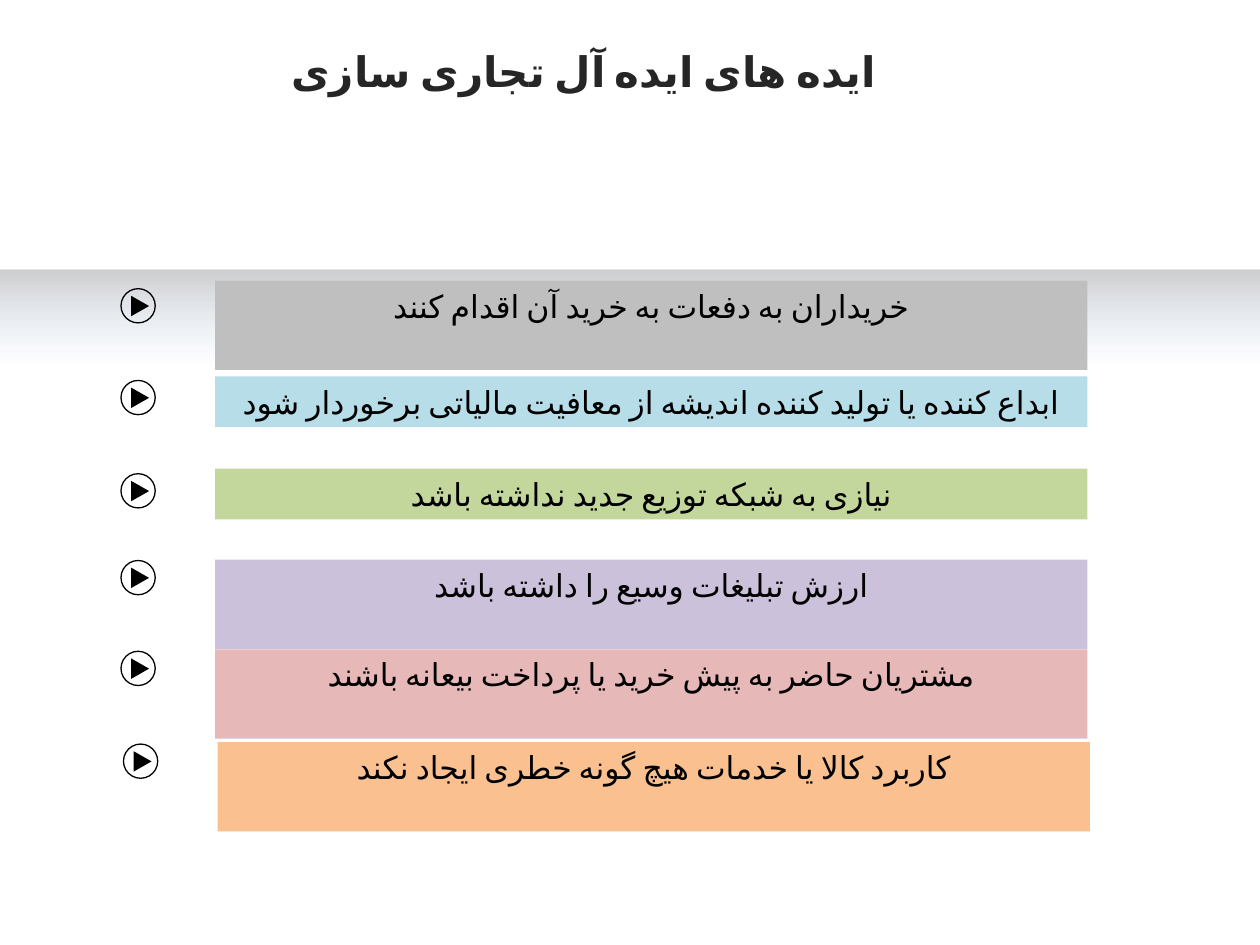
from dataclasses import dataclass

from lxml.etree import SubElement
from pptx import Presentation
from pptx.dml.color import RGBColor
from pptx.enum.shapes import MSO_SHAPE
from pptx.enum.text import MSO_ANCHOR, PP_ALIGN
from pptx.oxml.ns import qn
from pptx.shapes.autoshape import Shape
from pptx.slide import Slide
from pptx.util import Cm, Pt

FONT = "Calibri"
COLORS = {
    "title": "262626", "ink": "000000", "shade": "0D0D0D", "haze": "3F80CE",
    "grey": "BFBFBF", "blue": "B7DEE8", "green": "C3D69B",
    "purple": "CCC1DA", "red": "E6B9B8", "orange": "FAC090",
}
BAR_LEFT, BAR_WIDTH = 4.34, 17.58
SHORT, TALL = 1.02, 1.8
ICON_LEFT, ICON_SIZE = 2.44, 0.69
ARROW_WIDTH, ARROW_HEIGHT = 0.41, 0.36


@dataclass
class Idea:
    text: str
    color: str
    top: float
    height: float
    icon_top: float
    shift: float = 0


IDEAS = [
    Idea("خریداران به دفعات به خرید آن اقدام کنند", "grey", 5.66, TALL, 5.82),
    Idea("ابداع کننده یا تولید کننده اندیشه از معافیت مالیاتی برخوردار شود",
         "blue", 7.59, SHORT, 7.67),
    Idea("نیازی به شبکه توزیع جدید نداشته باشد", "green", 9.45, SHORT, 9.55),
    Idea("ارزش تبلیغات وسیع را داشته باشد", "purple", 11.28, TALL, 11.3),
    Idea("مشتریان حاضر به پیش خرید یا پرداخت بیعانه باشند",
         "red", 13.09, TALL, 13.13),
    Idea("کاربرد کالا یا خدمات هیچ گونه خطری ایجاد نکند",
         "orange", 14.96, TALL, 15, shift=0.05),
]


def rgb(name: str) -> RGBColor:
    return RGBColor.from_string(COLORS[name])


def fill_plain(shape: Shape, color: str) -> None:
    shape.shadow.inherit = False
    shape.fill.solid()
    shape.fill.fore_color.rgb = rgb(color)
    shape.line.fill.background()


def write_persian(shape: Shape, text: str, size: int, color: str,
                  bold: bool = False) -> None:
    """Write one centred right-to-left line at the top of the shape."""
    frame = shape.text_frame
    frame.word_wrap = True
    frame.vertical_anchor = MSO_ANCHOR.TOP
    paragraph = frame.paragraphs[0]
    paragraph.alignment = PP_ALIGN.CENTER
    paragraph._p.get_or_add_pPr().set("rtl", "1")
    run = paragraph.add_run()
    run.text = text
    run.font.name = FONT
    run.font.size = Pt(size)
    run.font.bold = bold
    run.font.color.rgb = rgb(color)
    properties = run._r.get_or_add_rPr()
    properties.set("lang", "fa-IR")
    SubElement(properties, qn("a:cs")).set("typeface", FONT)


def draw_title(slide: Slide) -> None:
    title = slide.shapes.add_textbox(Cm(2.18), Cm(0.79), Cm(19.18), Cm(1.3))
    write_persian(title, "ایده های ایده آل تجاری سازی", 24, "title", bold=True)


def draw_shadow_band(slide: Slide) -> None:
    """Draw the band that fades downwards from grey to nothing."""
    band = slide.shapes.add_shape(
        MSO_SHAPE.RECTANGLE, 0, Cm(5.43), Cm(25.4), Cm(3.35))
    band.shadow.inherit = False
    band.line.fill.background()
    band.fill.gradient()
    band.fill.gradient_angle = 270
    stops = zip(band.fill.gradient_stops,
                [("shade", 0, 20), ("haze", 0.57, 0)])
    for stop, (color, position, opacity) in stops:
        stop.position = position
        stop.color.rgb = rgb(color)
        color_element = stop._gs.find(qn("a:srgbClr"))
        SubElement(color_element, qn("a:alpha")).set("val", str(opacity * 1000))


def draw_play_icon(slide: Slide, left: float, top: float) -> None:
    icon = slide.shapes.add_group_shape()
    ring = icon.shapes.add_shape(
        MSO_SHAPE.OVAL, Cm(left), Cm(top), Cm(ICON_SIZE), Cm(ICON_SIZE))
    ring.shadow.inherit = False
    ring.fill.background()
    ring.line.color.rgb = rgb("ink")
    ring.line.width = Pt(0.75)
    arrow = icon.shapes.add_shape(
        MSO_SHAPE.ISOSCELES_TRIANGLE, Cm(left + 0.18), Cm(top + 0.17),
        Cm(ARROW_WIDTH), Cm(ARROW_HEIGHT))
    arrow.rotation = 90
    fill_plain(arrow, "ink")


def draw_idea(slide: Slide, idea: Idea) -> None:
    bar = slide.shapes.add_shape(
        MSO_SHAPE.RECTANGLE, Cm(BAR_LEFT + idea.shift), Cm(idea.top),
        Cm(BAR_WIDTH), Cm(idea.height))
    fill_plain(bar, idea.color)
    write_persian(bar, idea.text, 18, "ink")
    draw_play_icon(slide, ICON_LEFT + idea.shift, idea.icon_top)


def main() -> None:
    presentation = Presentation()
    presentation.slide_width = Cm(25.4)
    presentation.slide_height = Cm(19.05)
    slide = presentation.slides.add_slide(presentation.slide_layouts[6])
    draw_title(slide)
    draw_shadow_band(slide)
    for idea in IDEAS:
        draw_idea(slide, idea)
    presentation.save("out.pptx")


if __name__ == "__main__":
    main()
